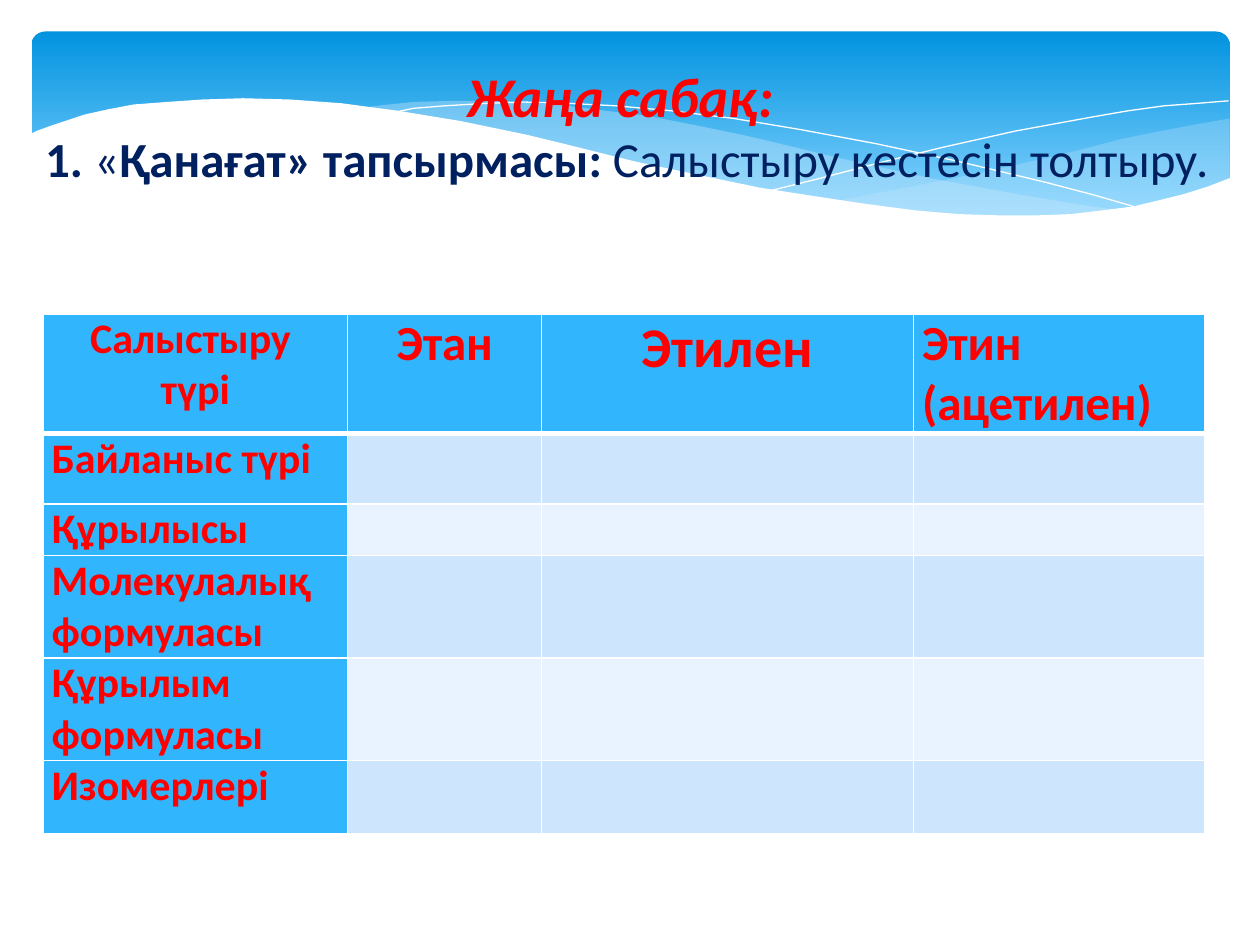
from lxml import etree
from pptx import Presentation
from pptx import util as u
from pptx.dml.color import RGBColor
from pptx.enum import shapes, text
from pptx.oxml.ns import qn

RED, NAVY, BLUE, WHITE, ICE = "FF0000", "002060", "31B6FD", "FFFFFF", "C6E7FC"
BANDS = ("CEE5FE", "E8F3FF")
HEADERS = [("Салыстыру \nтүрі", 24), ("Этан", 28), ("Этилен", 32), ("Этин (ацетилен)", 28)]
LABELS = ["Байланыс түрі", "Құрылысы", "Молекулалық формуласы", "Құрылым формуласы", "Изомерлері"]
COLUMNS = [2.42, 1.54, 2.95, 2.31]
ROWS = [0.78, 0.56, 0.39, 0.78, 0.78, 0.58]

# Outlines are in hundredths of an inch.
RIGHT_WAVE = [
    (976, 94), (948, 99), (921, 104), (891, 110), (861, 118), (832, 125), (779, 137),
    (729, 147), (661, 160), (691, 164), (719, 167), (745, 169), (769, 171), (792, 172),
    (835, 172), (863, 170), (889, 166), (913, 162), (935, 156), (963, 147), (976, 141)]
MIDDLE_WAVE = [
    (893, 167), (866, 164), (807, 154), (741, 142), (668, 126), (598, 109), (555, 100),
    (514, 92), (489, 89), (442, 83), (399, 80), (361, 80), (328, 81), (299, 84), (286, 86),
    (323, 90), (362, 97), (404, 106), (449, 116), (530, 135), (584, 146), (634, 156),
    (680, 163), (722, 168), (761, 171), (796, 173), (828, 173), (857, 171)]
LONG_LINE = [
    (309, 90), (328, 86), (353, 84), (387, 82), (416, 81), (450, 82), (489, 84), (533, 88),
    (582, 94), (636, 103), (695, 114), (760, 128), (831, 145), (869, 155), (907, 166)]
SHORT_LINE = [
    (613, 151), (653, 141), (695, 130), (748, 117), (806, 104), (866, 93), (895, 88),
    (924, 84), (951, 82), (975, 80)]
WHITE_WAVE = [
    (977, 141), (959, 148), (940, 154), (920, 159), (899, 164), (875, 167), (850, 170),
    (823, 171), (793, 171), (761, 170), (726, 167), (688, 162), (648, 156), (603, 149),
    (555, 139), (503, 128), (447, 114), (418, 107), (365, 96), (316, 88), (271, 82),
    (230, 79), (193, 78), (161, 79), (132, 81), (106, 83), (85, 87), (67, 91), (52, 96),
    (40, 100), (29, 104), (23, 107), (23, 224), (977, 224)]


def rgb(code):
    """Turn a hex string into a colour."""
    return RGBColor.from_string(code)


def add_banner(page):
    """Add the rounded gradient panel behind the heading."""
    panel = page.shapes.add_shape(
        shapes.MSO_SHAPE.ROUNDED_RECTANGLE,
        u.Inches(0.25), u.Inches(0.25), u.Inches(9.51), u.Inches(1.56))
    panel.shadow.inherit = False
    panel.adjustments[0] = 0.07
    panel.line.fill.background()
    panel.fill.gradient()
    panel.fill.gradient_angle = 270
    for stop, position, color in zip(panel.fill.gradient_stops, (0, 0.9), ("0293E0", "83D3FE")):
        stop.position = position
        stop.color.rgb = rgb(color)


def add_outline(page, points, closed):
    """Add a freeform through the given points."""
    builder = page.shapes.build_freeform(*points[0], scale=u.Inches(0.01))
    builder.add_line_segments(points[1:], close=closed)
    outline = builder.convert_to_shape()
    outline.shadow.inherit = False
    return outline


def add_wave(page, points, color, opacity=100):
    """Add a filled wave, see-through when opacity is below 100."""
    wave = add_outline(page, points, True)
    wave.line.fill.background()
    wave.fill.solid()
    wave.fill.fore_color.rgb = rgb(color)
    if opacity < 100:
        tint = wave.fill._xPr.find(".//" + qn("a:srgbClr"))
        etree.SubElement(tint, qn("a:alpha"), val=str(opacity * 1000))


def add_curve(page, points):
    """Add a white hairline curve."""
    curve = add_outline(page, points, False)
    curve.fill.background()
    curve.line.color.rgb = rgb(WHITE)
    curve.line.width = u.Pt(0)


def style_span(span, size, color, bold=True, italic=False):
    """Format one run."""
    font = span.font
    font.name, font.size, font.bold, font.italic = "Calibri", u.Pt(size), bold, italic
    font.color.rgb = rgb(color)


def add_heading(page):
    """Fill the title placeholder and bring it to the front."""
    box = page.shapes.title
    box.left, box.top, box.width, box.height = map(u.Inches, (0.2, 0.44, 9.55, 1.41))
    frame = box.text_frame
    frame.word_wrap = False
    frame.auto_size = text.MSO_AUTO_SIZE.NONE
    frame.vertical_anchor = text.MSO_ANCHOR.TOP
    lines = [
        [("Жаңа сабақ: ", 32, RED, True, True)],
        [("1. ", 28, NAVY), ("«", 28, NAVY, False), ("Қанағат» тапсырмасы: ", 28, NAVY),
         ("Салыстыру кестесін толтыру.", 28, NAVY, False)]]
    for index, line in enumerate(lines):
        para = frame.add_paragraph() if index else frame.paragraphs[0]
        para.alignment = text.PP_ALIGN.CENTER
        for words, *style in line:
            span = para.add_run()
            span.text = words
            style_span(span, *style)
    box.element.getparent().append(box.element)


def set_borders(cell, bottom):
    """Draw white borders round a cell."""
    properties = cell._tc.get_or_add_tcPr()
    widths = {"a:lnL": 1, "a:lnR": 1, "a:lnT": 1, "a:lnB": bottom}
    for index, (side, width) in enumerate(widths.items()):
        line = etree.Element(qn(side), w=str(u.Pt(width)))
        fill = etree.SubElement(line, qn("a:solidFill"))
        etree.SubElement(fill, qn("a:srgbClr"), val=WHITE)
        properties.insert(index, line)


def fill_cell(cell, color, words="", size=24, centered=False, bottom=1):
    """Set the fill, borders and text of a cell."""
    cell.fill.solid()
    cell.fill.fore_color.rgb = rgb(color)
    cell.margin_left = cell.margin_right = u.Inches(0.07)
    cell.margin_top = cell.margin_bottom = 0
    set_borders(cell, bottom)
    if words:
        cell.text_frame.text = words
    for para in cell.text_frame.paragraphs:
        para.alignment = text.PP_ALIGN.CENTER if centered else text.PP_ALIGN.LEFT
        for span in para.runs:
            style_span(span, size, RED)


def add_comparison(page):
    """Add the comparison table."""
    table = page.shapes.add_table(
        len(ROWS), len(COLUMNS), u.Inches(0.34), u.Inches(2.49),
        u.Inches(sum(COLUMNS)), u.Inches(sum(ROWS))).table
    for column, width in zip(table.columns, COLUMNS):
        column.width = u.Inches(width)
    for row, height in zip(table.rows, ROWS):
        row.height = u.Inches(height)
    for index, (words, size) in enumerate(HEADERS):
        fill_cell(table.cell(0, index), BLUE, words, size, index < 3, 3)
    for row, label in enumerate(LABELS, 1):
        fill_cell(table.cell(row, 0), BLUE, label)
        for column in range(1, len(COLUMNS)):
            fill_cell(table.cell(row, column), BANDS[(row - 1) % 2])


def main():
    """Build and save the slide."""
    deck = Presentation()
    deck.slide_width, deck.slide_height = u.Inches(10), u.Inches(7.5)
    page = deck.slides.add_slide(deck.slide_layouts[5])
    add_banner(page)
    add_wave(page, RIGHT_WAVE, ICE, 29)
    add_wave(page, MIDDLE_WAVE, ICE, 40)
    add_curve(page, LONG_LINE)
    add_curve(page, SHORT_LINE)
    add_wave(page, WHITE_WAVE, WHITE)
    add_comparison(page)
    add_heading(page)
    deck.save("out.pptx")


if __name__ == "__main__":
    main()
